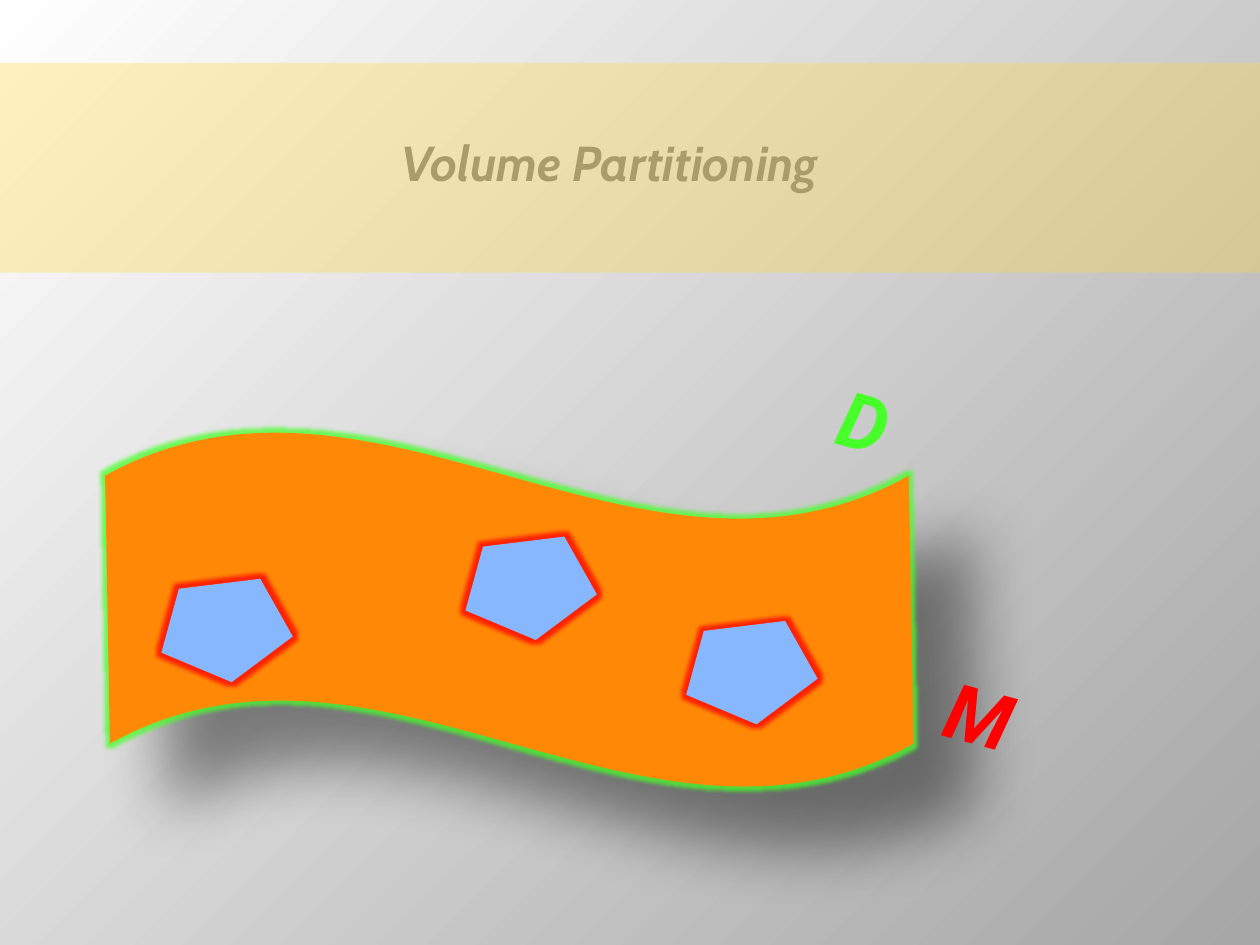
from lxml.etree import SubElement
from pptx import Presentation
from pptx.dml.color import RGBColor
from pptx.enum.shapes import MSO_SHAPE as Shape
from pptx.enum.text import MSO_ANCHOR as Anchor, PP_ALIGN as Align
from pptx.oxml import parse_xml
from pptx.oxml.ns import nsdecls, qn
from pptx.util import Cm, Pt

GREEN = "47FF29"
RED = "FF0000"


def color(value):
    return RGBColor.from_string(value)


def add_alpha(color_element, percent):
    SubElement(color_element, qn("a:alpha"), val=str(percent * 1000))


def add_effect(shape, name, value, alpha, **settings):
    effects = shape._element.spPr.find(qn("a:effectLst"))
    effect = SubElement(effects, qn(f"a:{name}"), **settings)
    add_alpha(SubElement(effect, qn("a:srgbClr"), val=value), alpha)


def add_glow(shape, value):
    add_effect(shape, "glow", value, 75, rad=str(Pt(5)))


def add_filled(slide, kind, left, top, width, height, fill, rotation=0):
    shape = slide.shapes.add_shape(kind, Cm(left), Cm(top), Cm(width), Cm(height))
    shape.shadow.inherit = False
    shape.fill.solid()
    shape.fill.fore_color.rgb = color(fill)
    shape.line.fill.background()
    shape.rotation = rotation
    return shape


def add_text(slide, text, left, top, width, height, *, size, font, fill, rotation=0):
    box = slide.shapes.add_textbox(Cm(left), Cm(top), Cm(width), Cm(height))
    box.rotation = rotation
    frame = box.text_frame
    frame.word_wrap = False
    frame.vertical_anchor = Anchor.TOP
    paragraph = frame.paragraphs[0]
    paragraph.alignment = Align.CENTER
    run = paragraph.add_run()
    run.text = text
    run.font.size = Pt(size)
    run.font.name = font
    run.font.bold = run.font.italic = True
    run.font.color.rgb = color(fill)


def set_background(slide, inner, outer):
    fill = slide.background.fill
    fill.solid()
    solid = slide._element.cSld.bg.bgPr.find(qn("a:solidFill"))
    gradient = parse_xml(
        f'<a:gradFill {nsdecls("a")} rotWithShape="1"><a:gsLst>'
        f'<a:gs pos="0"><a:srgbClr val="{inner}"/></a:gs>'
        f'<a:gs pos="100000"><a:srgbClr val="{outer}"/></a:gs></a:gsLst>'
        '<a:path path="circle"><a:fillToRect l="100000" t="100000"/></a:path>'
        "</a:gradFill>"
    )
    solid.getparent().replace(solid, gradient)


def add_volume(slide):
    wave = add_filled(slide, Shape.WAVE, 2.12, 8.69, 16.3, 7.2, "FF8907")
    wave.adjustments[0] = 0.125
    wave.adjustments[1] = 0.003
    add_glow(wave, GREEN)
    add_effect(wave, "outerShdw", "000000", 43, blurRad=str(Pt(37)),
               dist=str(Pt(48)), dir=str(45 * 60000), algn="tl", rotWithShape="0")


def add_partition(slide, left, top):
    pentagon = add_filled(slide, Shape.REGULAR_PENTAGON, left, top, 2.67, 2.54,
                          "87B8FF", rotation=173)
    pentagon.adjustments[1] = 0.87
    add_glow(pentagon, RED)


def add_band(slide):
    band = add_filled(slide, Shape.RECTANGLE, 0, 1.27, 25.4, 4.23, "FFDC3F")
    fill = band._element.spPr.find(qn("a:solidFill"))
    add_alpha(fill.find(qn("a:srgbClr")), 32)


def main():
    presentation = Presentation()
    presentation.slide_width, presentation.slide_height = Cm(25.4), Cm(19.05)
    slide = presentation.slides.add_slide(presentation.slide_layouts[6])
    set_background(slide, "A6A6A6", "FFFFFF")
    add_volume(slide)
    add_text(slide, "Volume Partitioning", 7.73, 2.54, 9.12, 1.45,
             size=28, font="Cabin", fill="808080")
    for left, top in ((13.76, 12.07), (3.18, 11.22), (9.31, 10.37)):
        add_partition(slide, left, top)
    for text, left, top, width, fill in (("D", 16, 7.42, 2.87, GREEN),
                                         ("M", 18.2, 13.34, 3.1, RED)):
        add_text(slide, text, left, top, width, 2.13, size=44, font="Roboto",
                 fill=fill, rotation=15)
    add_band(slide)
    presentation.save("out.pptx")


if __name__ == "__main__":
    main()
